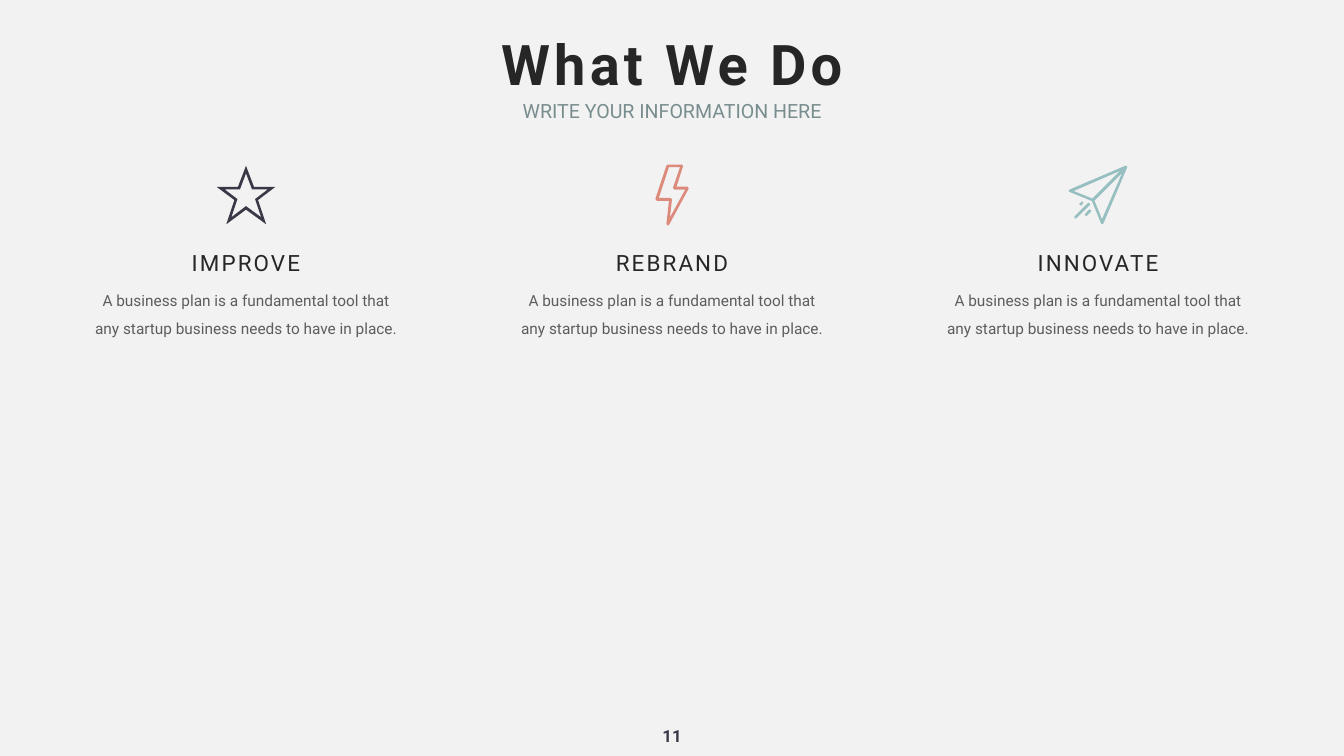
from dataclasses import dataclass

import pptx
import pptx.dml.color
import pptx.enum.text
import pptx.util

Inches = pptx.util.Inches
Pt = pptx.util.Pt
Anchor = pptx.enum.text.MSO_ANCHOR

FONT = "Roboto"
INK = "262626"
SLATE = "3A3846"
COLUMN_PITCH = 8.45
MIDDLE = 13.33
ICON_MIDDLE = 3.87
ICON_UNIT = Inches(0.01)
BLURB = ("A business plan is a fundamental tool that "
         "any startup business needs to have in place.")

Contour = list[tuple[int, int]]


@dataclass(frozen=True)
class TextStyle:
    size: float
    color: str
    bold: bool = False
    tracking: float = 0
    line_spacing: float | None = None
    space_after: float = 0
    anchor: Anchor = Anchor.TOP
    wrap: bool = False


@dataclass(frozen=True)
class Icon:
    width: int
    height: int
    color: str
    contours: list[Contour]


@dataclass(frozen=True)
class Service:
    heading: str
    heading_width: float
    icon: Icon


TITLE = TextStyle(80, INK, bold=True, tracking=6, anchor=Anchor.BOTTOM)
SUBTITLE = TextStyle(28, "798D8E", line_spacing=40, space_after=12)
HEADING = TextStyle(32, INK, tracking=3, anchor=Anchor.BOTTOM)
BODY = TextStyle(22, "5D5D5D", line_spacing=40, space_after=18, wrap=True)
PAGE_NUMBER = TextStyle(24, SLATE, bold=True, anchor=Anchor.MIDDLE)

STAR = Icon(116, 116, SLATE, [
    [(116, 42), (74, 42), (58, 0), (42, 42), (0, 42), (35, 68), (19, 116),
     (58, 87), (98, 116), (82, 68)],
    [(88, 102), (58, 80), (29, 102), (41, 66), (16, 47), (46, 47), (58, 15),
     (70, 47), (101, 47), (76, 66)],
])
BOLT = Icon(66, 121, "DC8A7C", [
    [(66, 47), (64, 44), (42, 44), (55, 3), (53, 0), (25, 0), (22, 2), (0, 68),
     (3, 72), (27, 72), (22, 118), (25, 121), (27, 120), (66, 48)],
    [(29, 105), (33, 69), (30, 66), (7, 66), (27, 5), (49, 5), (35, 46),
     (38, 50), (59, 50)],
])
PAPER_PLANE = Icon(116, 116, "97BFC1", [
    [(112, 0), (2, 47), (0, 50), (2, 52), (46, 70), (64, 114), (66, 116),
     (69, 114), (116, 3), (115, 0)],
    [(66, 106), (51, 69), (106, 14)],
    [(10, 50), (102, 10), (47, 65)],
    [(40, 87), (33, 95), (32, 97), (34, 100), (36, 99), (44, 91), (45, 89),
     (42, 87)],
    [(40, 73), (38, 74), (11, 101), (11, 102), (13, 105), (15, 104), (42, 78),
     (42, 76)],
    [(26, 78), (28, 75), (29, 73), (27, 71), (25, 72), (22, 74), (21, 76),
     (24, 79)],
])
SERVICES = [
    Service("IMPROVE", 2.4, STAR),
    Service("REBRAND", 2.49, BOLT),
    Service("INNOVATE", 2.68, PAPER_PLANE),
]


def rgb(value: str) -> pptx.dml.color.RGBColor:
    return pptx.dml.color.RGBColor.from_string(value)


def write(shape, text: str, style: TextStyle) -> None:
    frame = shape.text_frame
    frame.word_wrap = style.wrap
    frame.auto_size = pptx.enum.text.MSO_AUTO_SIZE.SHAPE_TO_FIT_TEXT
    frame.vertical_anchor = style.anchor
    paragraph = frame.paragraphs[0]
    paragraph.alignment = pptx.enum.text.PP_ALIGN.CENTER
    paragraph.space_after = Pt(style.space_after)
    if style.line_spacing:
        paragraph.line_spacing = Pt(style.line_spacing)
    run = paragraph.add_run()
    run.text = text
    run.font.name = FONT
    run.font.size = Pt(style.size)
    run.font.bold = style.bold
    run.font.color.rgb = rgb(style.color)
    if style.tracking:
        run._r.get_or_add_rPr().set("spc", str(int(style.tracking * 100)))


def add_text(slide, center: float, top: float, width: float, height: float,
             text: str, style: TextStyle) -> None:
    box = slide.shapes.add_textbox(Inches(center - width / 2), Inches(top),
                                   Inches(width), Inches(height))
    write(box, text, style)


def add_icon(slide, center: float, icon: Icon) -> None:
    first, *others = icon.contours
    builder = slide.shapes.build_freeform(*first[0], scale=ICON_UNIT)
    builder.add_line_segments(first[1:], close=True)
    for contour in others:
        builder.move_to(*contour[0])
        builder.add_line_segments(contour[1:], close=True)
    shape = builder.convert_to_shape(Inches(center - icon.width / 200),
                                     Inches(ICON_MIDDLE - icon.height / 200))
    shape.shadow.inherit = False
    shape.fill.solid()
    shape.fill.fore_color.rgb = rgb(icon.color)
    shape.line.fill.background()


def add_service(slide, center: float, service: Service) -> None:
    add_text(slide, center, 5.53, 6.44, 1.16, BLURB, BODY)
    add_text(slide, center, 4.89, service.heading_width, 0.64,
             service.heading, HEADING)
    add_icon(slide, center, service.icon)


def main() -> None:
    deck = pptx.Presentation()
    deck.slide_width = Inches(26.66)
    deck.slide_height = Inches(15)
    slide = deck.slides.add_slide(deck.slide_layouts[5])
    slide.background.fill.solid()
    slide.background.fill.fore_color.rgb = rgb("F2F2F2")

    title = slide.shapes.title
    title.left, title.top = Inches(9.74), Inches(0.52)
    title.width, title.height = Inches(7.18), Inches(1.45)
    write(title, "What We Do", TITLE)
    add_text(slide, MIDDLE, 1.83, 6.22, 0.62,
             "WRITE YOUR INFORMATION HERE", SUBTITLE)

    for column, service in enumerate(SERVICES):
        add_service(slide, MIDDLE + (column - 1) * COLUMN_PITCH, service)

    add_text(slide, MIDDLE, 14.35, 0.62, 0.5, "11", PAGE_NUMBER)
    deck.save("out.pptx")


if __name__ == "__main__":
    main()
